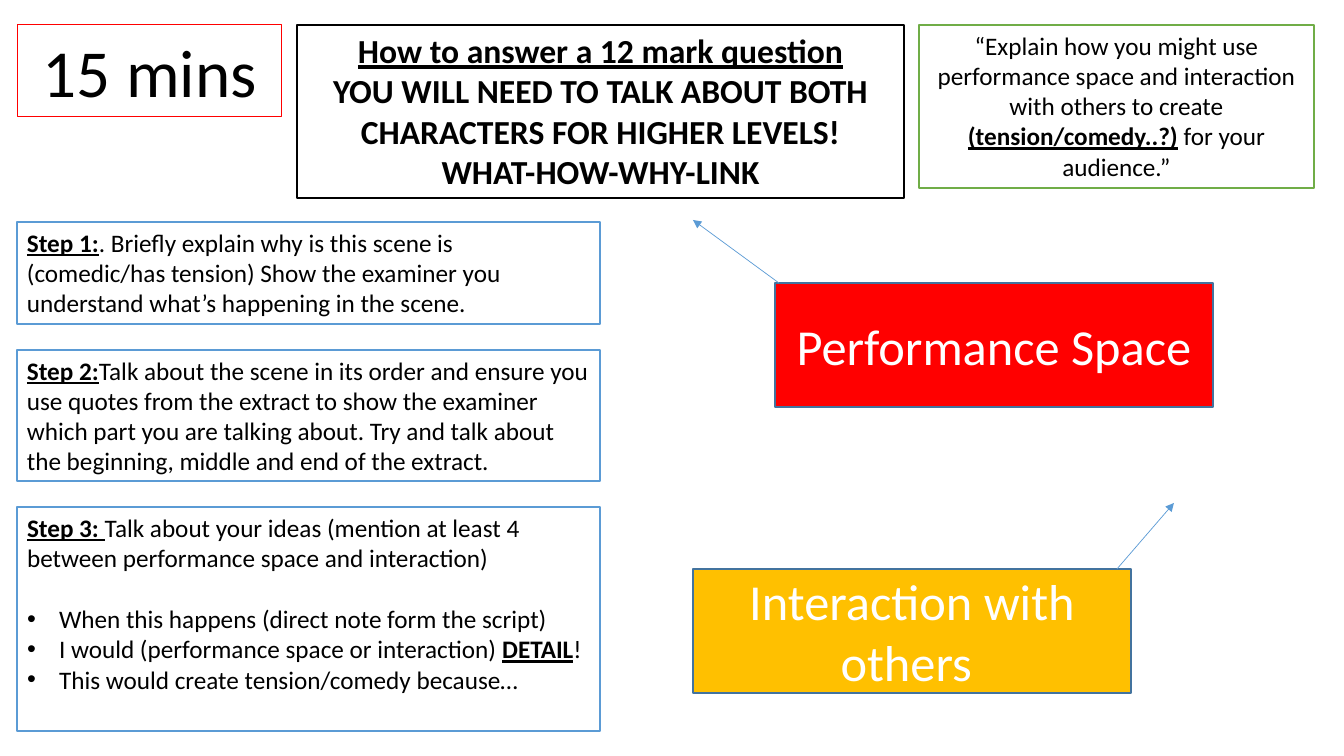
"""Build a one-slide guide to answering a 12 mark drama question."""
from lxml import etree
from pptx import Presentation
from pptx import util as u
from pptx.dml.color import RGBColor
from pptx.enum import shapes, text
from pptx.oxml.ns import qn

PX = 12192000 / 1344
FONT, BLACK, WHITE, BLUE, EDGE = "Calibri", "000000", "FFFFFF", "5B9BD5", "43739E"
LEFT, CENTER = text.PP_ALIGN.LEFT, text.PP_ALIGN.CENTER
TOP, MIDDLE = text.MSO_ANCHOR.TOP, text.MSO_ANCHOR.MIDDLE

HEADING = [
    "**How to answer a 12 mark question**",
    "YOU WILL NEED TO TALK ABOUT BOTH CHARACTERS FOR HIGHER LEVELS!",
    "WHAT-HOW-WHY-LINK",
]
QUESTION = [
    "“Explain how you might use performance space and interaction with others "
    "to create **(tension/comedy..?)** for your audience.”"
]
STEPS = [
    (102, ["**Step 1:**. Briefly explain why is this scene is (comedic/has tension) "
           "Show the examiner you understand what’s happening in the scene."]),
    (131, ["**Step 2:**Talk about the scene in its order and ensure you use quotes from "
           "the extract to show the examiner which part you are talking about. Try and "
           "talk about the beginning, middle and end of the extract."]),
    (224, ["**Step 3: **Talk about your ideas (mention at least 4 between performance "
           "space and interaction)",
           "• When this happens (direct note form the script)",
           "• I would (performance space or interaction) **DETAIL**!",
           "• This would create tension/comedy because…"]),
]
STEP_LEFT, STEP_TOP, STEP_WIDTH, STEP_GAP = 17, 222, 583, 26
TOPICS = [
    ("Performance Space", (775, 283, 438, 124), "FF0000"),
    ("Interaction with others ", (693, 569, 438, 124), "FFC000"),
]
ARROWS = [(779, 283, 693, 220), (1117, 569, 1174, 503)]


def px(n):
    return u.Emu(round(n * PX))


def rgb(value):
    return RGBColor.from_string(value)


def set_bullet(p, char):
    ppr = p._p.get_or_add_pPr()
    indent = px(32) if char else 0
    ppr.set("marL", str(indent))
    ppr.set("indent", str(-indent))
    if char:
        etree.SubElement(ppr, qn("a:buFont")).set("typeface", "Arial")
        etree.SubElement(ppr, qn("a:buChar")).set("char", char)
    else:
        etree.SubElement(ppr, qn("a:buNone"))


def write(tf, lines, size, color, align, bold):
    tf.text = "\n".join(lines)
    listed = False
    for p, line in zip(tf.paragraphs, lines):
        bullet = line.startswith("• ")
        p.text = ""
        p.alignment = align
        p.line_spacing = 1.0
        p.space_before = u.Pt(22 if bullet and not listed else 0)
        set_bullet(p, "•" if bullet else None)
        listed = bullet
        for i, part in enumerate(line.removeprefix("• ").split("**")):
            if part:
                r = p.add_run()
                r.text = part
                r.font.name, r.font.size = FONT, u.Pt(size)
                r.font.color.rgb = rgb(color)
                strong = i % 2 == 1
                r.font.bold, r.font.underline = bold or strong, strong


def add_box(s, box, lines, size, line, fill=WHITE, color=BLACK, align=CENTER,
            anchor=TOP, width=1, bold=False, sp=None):
    if sp is None:
        sp = s.shapes.add_shape(shapes.MSO_SHAPE.RECTANGLE, 0, 0, 0, 0)
        sp.shadow.inherit = False
    sp.left, sp.top, sp.width, sp.height = map(px, box)
    if fill:
        sp.fill.solid()
        sp.fill.fore_color.rgb = rgb(fill)
    else:
        sp.fill.background()
    sp.line.color.rgb = rgb(line)
    sp.line.width = u.Pt(width)
    tf = sp.text_frame
    tf.word_wrap = True
    tf.auto_size = text.MSO_AUTO_SIZE.NONE
    tf.vertical_anchor = anchor
    write(tf, lines, size, color, align, bold)


def add_arrow(s, ends):
    c = s.shapes.add_connector(shapes.MSO_CONNECTOR.STRAIGHT, *map(px, ends))
    c.line.color.rgb = rgb(BLUE)
    c.line.width = u.Pt(0.5)
    etree.SubElement(c.line._get_or_add_ln(), qn("a:tailEnd")).set("type", "triangle")
    etree.SubElement(c._element.spPr, qn("a:effectLst"))


def main():
    prs = Presentation()
    prs.slide_width, prs.slide_height = px(1344), px(756)
    s = prs.slides.add_slide(prs.slide_layouts[1])
    title, body = s.placeholders

    add_box(s, (297, 25, 607, 173), HEADING, 24, BLACK, bold=True, sp=title)
    add_box(s, (919, 25, 395, 163), QUESTION, 18, "70AD47")
    add_box(s, (18, 25, 264, 92), ["15 mins"], 48, "FF0000", fill=None, width=0.75)

    top = STEP_TOP
    for height, lines in STEPS:
        add_box(s, (STEP_LEFT, top, STEP_WIDTH, height), lines, 18, BLUE, align=LEFT,
                sp=body if len(lines) > 1 else None)
        top += height + STEP_GAP

    for name, box, fill in TOPICS:
        add_box(s, box, [name], 36, EDGE, fill=fill, color=WHITE, anchor=MIDDLE)
    for ends in ARROWS:
        add_arrow(s, ends)
    prs.save("out.pptx")


if __name__ == "__main__":
    main()
